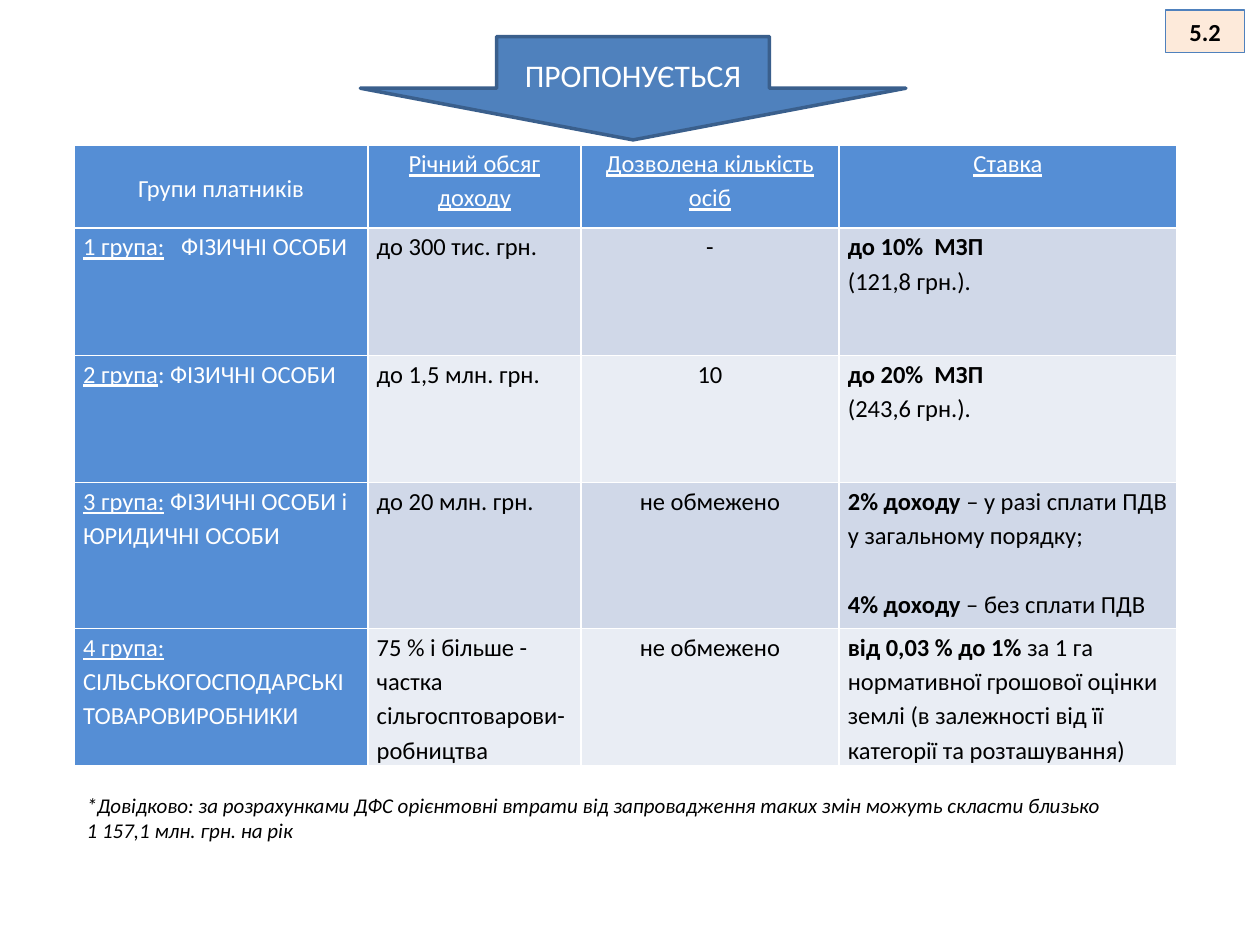
"""Build the slide on the proposed taxpayer groups and rates."""
import pptx
import pptx.dml.color
import pptx.enum.shapes
import pptx.enum.text
import pptx.util

Inches, Pt = pptx.util.Inches, pptx.util.Pt
ALIGN, ANCHOR = pptx.enum.text.PP_ALIGN, pptx.enum.text.MSO_ANCHOR
SHAPE = pptx.enum.shapes.MSO_SHAPE

HEADER = [("", "Групи платників"), ("Річний обсяг доходу", ""),
          ("Дозволена кількість осіб", ""), ("Ставка", "")]
GROUPS = [
    (("1 група:", "   ФІЗИЧНІ ОСОБИ"), "до 300 тис. грн.", "-",
     [("до 10%  МЗП", ""), ("", "(121,8 грн.).")]),
    (("2 група", ": ФІЗИЧНІ ОСОБИ"), "до 1,5 млн. грн.", "10",
     [("до 20%  МЗП", ""), ("", "(243,6 грн.).")]),
    (("3 група:", " ФІЗИЧНІ ОСОБИ і ЮРИДИЧНІ ОСОБИ"), "до 20 млн. грн.", "не обмежено",
     [("2% доходу ", "– у разі сплати ПДВ у загальному порядку;"),
      ("4% доходу", " – без сплати ПДВ")]),
    (("4 група: ", "СІЛЬСЬКОГОСПОДАРСЬКІ ТОВАРОВИРОБНИКИ"),
     "75 % і більше - частка сільгосптоварови-робництва", "не обмежено",
     [("від 0,03 % до 1% ", "за 1 га нормативної грошової оцінки землі "
       "(в залежності від її категорії та розташування)")]),
]
FOOTNOTE = ["*Довідково: за розрахунками ДФС орієнтовні втрати від запровадження "
            "таких змін можуть скласти близько", "1 157,1 млн. грн. на рік"]
COLUMNS = [2.33, 1.69, 2.05, 2.68]
ROWS = [0.66, 1.01, 1.01, 1.16, 1.08]
LEFT, TOP = 0.59, 1.15
HEAD_FILL, BANDS = "558ED5", ["D0D8E8", "E9EDF4"]
LINE_GAP = 19.6


def rgb(value):
    return pptx.dml.color.RGBColor.from_string(value)


def style(r, size, color, bold=False, italic=False, underline=False):
    r.font.name, r.font.size = "Calibri", Pt(size)
    r.font.color.rgb = rgb(color)
    r.font.bold, r.font.italic, r.font.underline = bold, italic, underline


def add_label(slide, kind, box, text, size, color, fill, line, width, bold=False):
    s = slide.shapes.add_shape(kind, *map(Inches, box))
    s.shadow.inherit = False
    s.fill.solid()
    s.fill.fore_color.rgb = rgb(fill)
    s.line.color.rgb = rgb(line)
    s.line.width = Pt(width)
    tf = s.text_frame
    tf.text = text
    tf.vertical_anchor = ANCHOR.MIDDLE
    tf.paragraphs[0].alignment = ALIGN.CENTER
    style(tf.paragraphs[0].runs[0], size, color, bold)


def fill_cell(cell, paragraphs, fill, color, align, lead_style, gap=0):
    cell.fill.solid()
    cell.fill.fore_color.rgb = rgb(fill)
    cell.margin_left = cell.margin_right = Inches(0.07)
    cell.margin_top = cell.margin_bottom = 0
    tf = cell.text_frame
    for i, (lead, rest) in enumerate(paragraphs):
        p = tf.add_paragraph() if i else tf.paragraphs[0]
        p.alignment, p.line_spacing = align, 1.15
        if i and gap:
            p.space_before = Pt(gap)
        for text, look in ((lead, {lead_style: True}), (rest, {})):
            if text:
                r = p.add_run()
                r.text = text
                style(r, 14, color, **look)


def add_groups_table(slide):
    table = slide.shapes.add_table(len(ROWS), len(COLUMNS), Inches(LEFT), Inches(TOP),
                                   Inches(sum(COLUMNS)), Inches(sum(ROWS))).table
    for column, width in zip(table.columns, COLUMNS):
        column.width = Inches(width)
    for row, height in zip(table.rows, ROWS):
        row.height = Inches(height)
    for j, title in enumerate(HEADER):
        fill_cell(table.cell(0, j), [title], HEAD_FILL, "FFFFFF", ALIGN.CENTER, "underline")
    table.cell(0, 0).vertical_anchor = ANCHOR.MIDDLE
    for i, (group, income, staff, rate) in enumerate(GROUPS, 1):
        band = BANDS[(i - 1) % 2]
        gap = LINE_GAP if group[0].startswith("3") else 0
        fill_cell(table.cell(i, 0), [group], HEAD_FILL, "FFFFFF", ALIGN.LEFT, "underline")
        fill_cell(table.cell(i, 1), [("", income)], band, "000000", ALIGN.LEFT, "bold")
        fill_cell(table.cell(i, 2), [("", staff)], band, "000000", ALIGN.CENTER, "bold")
        fill_cell(table.cell(i, 3), rate, band, "000000", ALIGN.LEFT, "bold", gap)


def add_footnote(slide):
    tf = slide.shapes.add_textbox(*map(Inches, (LEFT, 6.24, 8.9, 0.5))).text_frame
    tf.word_wrap = True
    tf.text = "\n".join(FOOTNOTE)
    for p in tf.paragraphs:
        style(p.runs[0], 12, "000000", italic=True)


def main():
    prs = pptx.Presentation()
    prs.slide_width, prs.slide_height = Inches(10), Inches(7.5)
    slide = prs.slides.add_slide(prs.slide_layouts[6])
    add_groups_table(slide)
    add_label(slide, SHAPE.DOWN_ARROW, (2.86, 0.29, 4.33, 0.82), "ПРОПОНУЄТЬСЯ",
              18, "FFFFFF", "4F81BD", "3A5F8C", 2)
    add_footnote(slide)
    add_label(slide, SHAPE.RECTANGLE, (9.25, 0.08, 0.63, 0.34), "5.2",
              14, "000000", "FDEADA", "4F81BD", 0.75, bold=True)
    prs.save("out.pptx")


if __name__ == "__main__":
    main()
